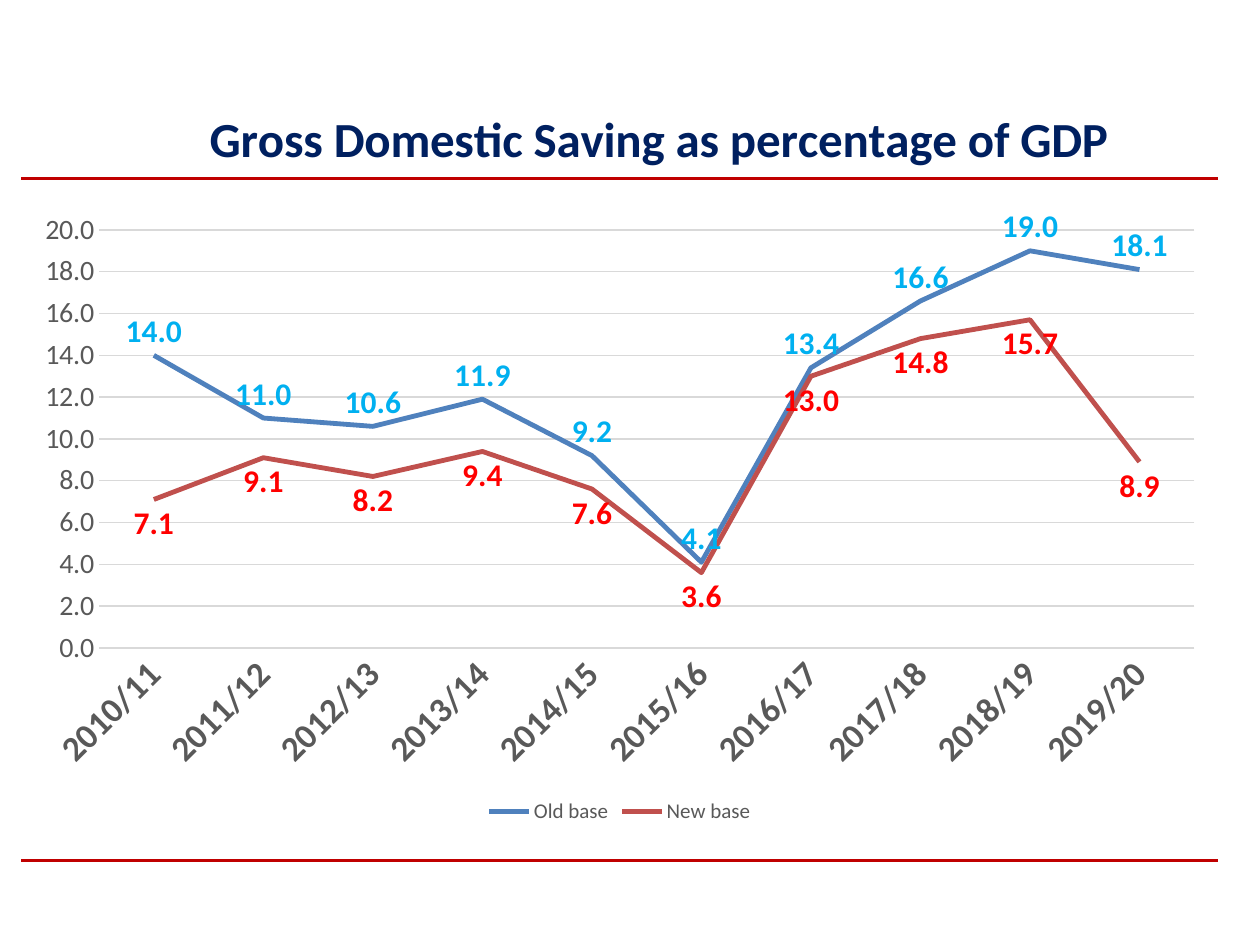
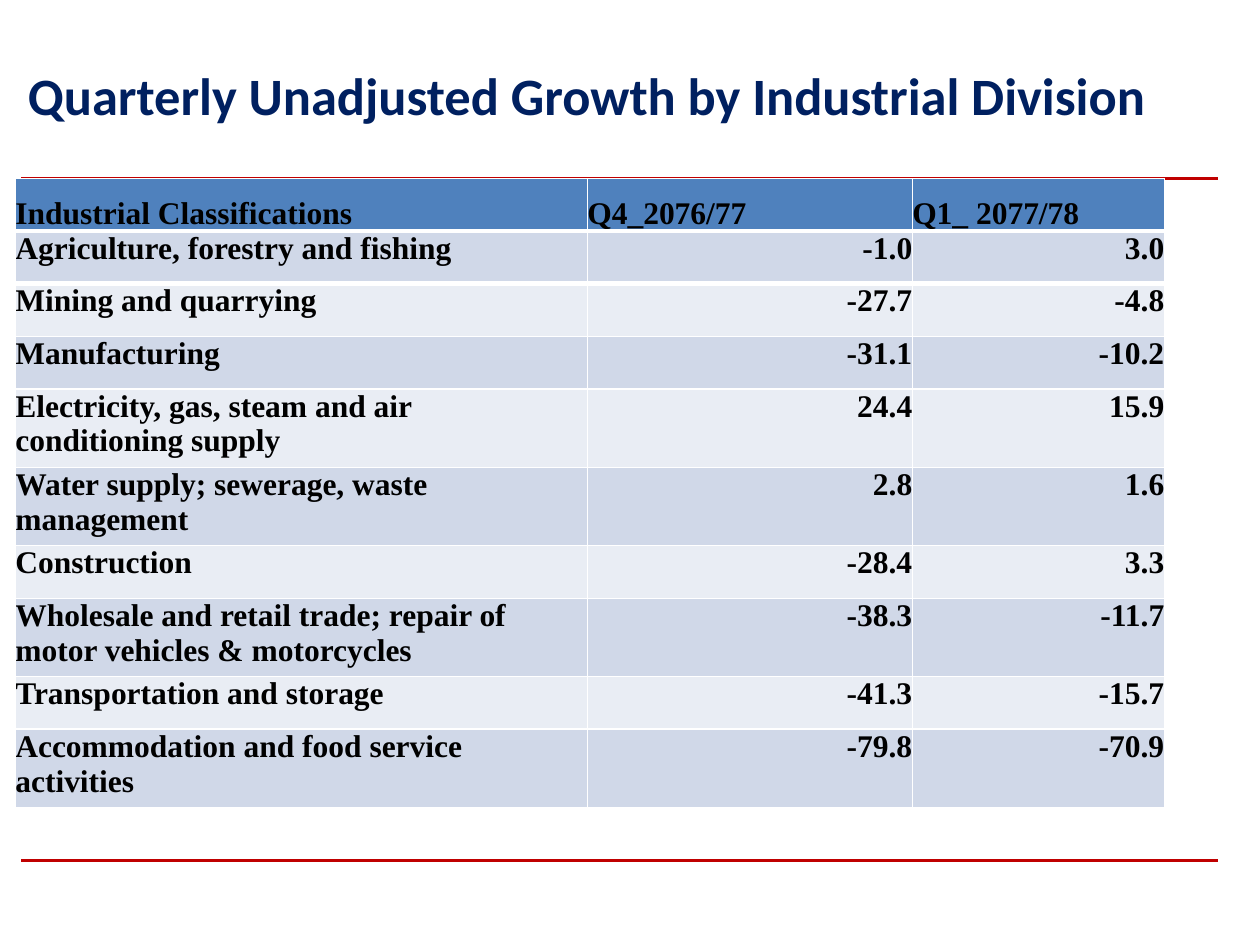
from pptx import Presentation
from pptx.chart.data import CategoryChartData
from pptx.dml.color import RGBColor
from pptx.enum.chart import XL_CHART_TYPE, XL_LABEL_POSITION, XL_LEGEND_POSITION, XL_TICK_MARK
from pptx.enum.shapes import MSO_CONNECTOR
from pptx.enum.text import MSO_ANCHOR, MSO_AUTO_SIZE, PP_ALIGN
from pptx.oxml import parse_xml
from pptx.oxml.ns import nsdecls, qn
from pptx.util import Cm, Pt

LEFT, RIGHT = PP_ALIGN.LEFT, PP_ALIGN.RIGHT
TOP, MIDDLE, BOTTOM = MSO_ANCHOR.TOP, MSO_ANCHOR.MIDDLE, MSO_ANCHOR.BOTTOM
NO_TICK = XL_TICK_MARK.NONE
LINE_CHART = XL_CHART_TYPE.LINE
LEGEND_BOTTOM = XL_LEGEND_POSITION.BOTTOM
LABEL_ABOVE, LABEL_BELOW = XL_LABEL_POSITION.ABOVE, XL_LABEL_POSITION.BELOW
STRAIGHT = MSO_CONNECTOR.STRAIGHT
NO_AUTOFIT = MSO_AUTO_SIZE.NONE

BLACK = RGBColor(0x00, 0x00, 0x00)
WHITE = RGBColor(0xFF, 0xFF, 0xFF)
NAVY = RGBColor(0x00, 0x20, 0x60)
RULE_RED = RGBColor(0xC0, 0x00, 0x00)
GREY = RGBColor(0x59, 0x59, 0x59)
GRID_GREY = RGBColor(0xD9, 0xD9, 0xD9)
BLUE = RGBColor(0x4F, 0x81, 0xBD)
BRICK = RGBColor(0xC0, 0x50, 0x4D)
LABEL_BLUE = RGBColor(0x00, 0xB0, 0xF0)
LABEL_RED = RGBColor(0xFF, 0x00, 0x00)
BAND_DARK = RGBColor(0xD0, 0xD8, 0xE8)
BAND_LIGHT = RGBColor(0xE9, 0xED, 0xF4)

SANS, SERIF = "Calibri", "Times New Roman"
TITLE_ONLY, BLANK = 5, 6

SAVING_YEARS = [f"{year}/{year % 100 + 1}" for year in range(2010, 2020)]
SAVING_SERIES = [
    ("Old base", [14, 11, 10.6, 11.9, 9.2, 4.1, 13.4, 16.6, 19, 18.1], BLUE, LABEL_BLUE, LABEL_ABOVE),
    ("New base", [7.1, 9.1, 8.2, 9.4, 7.6, 3.6, 13, 14.8, 15.7, 8.9], BRICK, LABEL_RED, LABEL_BELOW),
]
GROWTH_ROWS = [
    ("Industrial Classifications", "Q4_2076/77", "Q1_ 2077/78"),
    ("Agriculture, forestry and fishing", "-1.0", "3.0"),
    ("Mining and quarrying", "-27.7", "-4.8"),
    ("Manufacturing", "-31.1", "-10.2"),
    ("Electricity, gas, steam and air conditioning supply", "24.4", "15.9"),
    ("Water supply; sewerage, waste management", "2.8", "1.6"),
    ("Construction", "-28.4", "3.3"),
    ("Wholesale and retail trade; repair of motor vehicles & motorcycles", "-38.3", "-11.7"),
    ("Transportation and storage", "-41.3", "-15.7"),
    ("Accommodation and food service activities", "-79.8", "-70.9"),
]
SHORT_ROW, TALL_ROW, LONGEST_SINGLE_LINE = 1.06, 1.58, 35


def set_font(font, size, color, bold=False, name=SANS):
    font.name, font.size, font.bold = name, Pt(size), bold
    font.color.rgb = color


def write_text(text_frame, text, align=None, **font_format):
    paragraph = text_frame.paragraphs[0]
    paragraph.alignment = align
    run = paragraph.add_run()
    run.text = text
    set_font(run.font, **font_format)


def set_line(line, color, width):
    line.color.rgb = color
    line.width = Pt(width)


def set_cell_border(cell, edge, color, width):
    cell._tc.get_or_add_tcPr().insert(0, parse_xml(
        f'<a:{edge} {nsdecls("a")} w="{Pt(width)}"><a:solidFill><a:srgbClr val="{color}"/></a:solidFill></a:{edge}>'))


def set_chart_layout(parent, index, target="", **fractions):
    for layout in parent.findall(qn("c:layout")):
        parent.remove(layout)
    modes = "".join(f'<c:{side}Mode val="edge"/>' for side in "xy")
    values = "".join(f'<c:{key} val="{value}"/>' for key, value in fractions.items())
    parent.insert(index, parse_xml(
        f'<c:layout {nsdecls("c")}><c:manualLayout>{target}{modes}{values}</c:manualLayout></c:layout>'))


class Deck:
    def __init__(self):
        self.presentation = Presentation()
        self.presentation.slide_width = Cm(25.4)
        self.presentation.slide_height = Cm(19.05)
        self.slide = None

    def new_slide(self, layout_index):
        layout = self.presentation.slide_layouts[layout_index]
        self.slide = self.presentation.slides.add_slide(layout)
        for rule_top in (3.6, 17.35):
            self.rule(rule_top)

    def rule(self, top):
        connector = self.slide.shapes.add_connector(STRAIGHT, Cm(0.43), Cm(top), Cm(24.56), Cm(top))
        set_line(connector.line, RULE_RED, 1.5)
        connector._element.spPr.append(parse_xml(f'<a:effectLst {nsdecls("a")}/>'))

    def title(self, text):
        title = self.slide.shapes.title
        title.left, title.top, title.width, title.height = Cm(0.31), Cm(0.64), Cm(24.43), Cm(2.54)
        title.text_frame.auto_size = NO_AUTOFIT
        title.text_frame.vertical_anchor = MIDDLE
        write_text(title.text_frame, text, align=LEFT, size=30, color=NAVY, bold=True)

    def line_chart(self, title, categories, series_rows):
        chart_data = CategoryChartData(number_format="0.0")
        chart_data.categories = categories
        for name, values, *_ in series_rows:
            chart_data.add_series(name, values)
        chart = self.slide.shapes.add_chart(
            LINE_CHART, Cm(0.43), Cm(1.95), Cm(24.13), Cm(14.76), chart_data).chart
        set_font(chart.font, 10, BLACK)
        chart.plots[0].vary_by_categories = False

        write_text(chart.chart_title.text_frame, title, size=28, color=NAVY, bold=True)
        set_chart_layout(chart.chart_title._element, 1, x=0.15, y=0)
        plot_area = chart.element.find(".//" + qn("c:plotArea"))
        set_chart_layout(plot_area, 0, '<c:layoutTarget val="inner"/>', x=0.065, y=0.182, w=0.915, h=0.571)

        chart.has_legend = True
        chart.legend.position = LEGEND_BOTTOM
        chart.legend.include_in_layout = False
        set_font(chart.legend.font, 12, GREY)
        self.chart_axes(chart)
        for series, (_, _, color, label_color, position) in zip(chart.plots[0].series, series_rows):
            self.chart_series(series, color, label_color, position)

    def chart_axes(self, chart):
        category_axis, value_axis = chart.category_axis, chart.value_axis
        for axis in (category_axis, value_axis):
            axis.major_tick_mark = axis.minor_tick_mark = NO_TICK
        set_font(category_axis.tick_labels.font, 20, GREY, bold=True)
        category_axis._element.txPr.bodyPr.set("rot", "-2700000")
        set_line(category_axis.format.line, GRID_GREY, 1)
        set_font(value_axis.tick_labels.font, 16, GREY)
        value_axis.tick_labels.number_format = "0.0"
        value_axis.tick_labels.number_format_is_linked = False
        value_axis.minimum_scale, value_axis.maximum_scale, value_axis.major_unit = 0, 20, 2
        value_axis.format.line.fill.background()
        set_line(value_axis.major_gridlines.format.line, GRID_GREY, 0.75)

    def chart_series(self, series, color, label_color, position):
        series.smooth = False
        set_line(series.format.line, color, 2.75)
        labels = series.data_labels
        labels.show_value = True
        labels.number_format = "0.0"
        labels.number_format_is_linked = False
        labels.position = position
        set_font(labels.font, 18, label_color, bold=True)

    def table(self, rows, column_widths):
        heights = [TALL_ROW if len(row[0]) > LONGEST_SINGLE_LINE else SHORT_ROW for row in rows]
        table = self.slide.shapes.add_table(
            len(rows), len(column_widths), Cm(0.31), Cm(3.6), Cm(sum(column_widths)), Cm(sum(heights))).table
        for column, width in zip(table.columns, column_widths):
            column.width = Cm(width)
        for row_index, (row, height) in enumerate(zip(rows, heights)):
            table.rows[row_index].height = Cm(height)
            is_header = row_index == 0
            band = BLUE if is_header else (BAND_LIGHT, BAND_DARK)[row_index % 2]
            for column_index, text in enumerate(row):
                align = LEFT if is_header or column_index == 0 else RIGHT
                self.table_cell(table.cell(row_index, column_index), text, band, align,
                                BOTTOM if is_header else TOP)
        for row_index, edge in enumerate(("lnB", "lnT")):
            for cell in table.rows[row_index].cells:
                set_cell_border(cell, edge, WHITE, 3)

    def table_cell(self, cell, text, band, align, anchor):
        cell.margin_left = cell.margin_right = cell.margin_top = cell.margin_bottom = 0
        cell.vertical_anchor = anchor
        cell.fill.solid()
        cell.fill.fore_color.rgb = band
        write_text(cell.text_frame, text, align=align, size=18, color=BLACK, bold=True, name=SERIF)


def main():
    deck = Deck()
    deck.new_slide(BLANK)
    deck.line_chart("Gross Domestic Saving as percentage of GDP", SAVING_YEARS, SAVING_SERIES)
    deck.new_slide(TITLE_ONLY)
    deck.title("Quarterly Unadjusted Growth by Industrial Division")
    deck.table(GROWTH_ROWS, (11.53, 6.55, 5.08))
    deck.presentation.save("out.pptx")


if __name__ == "__main__":
    main()
